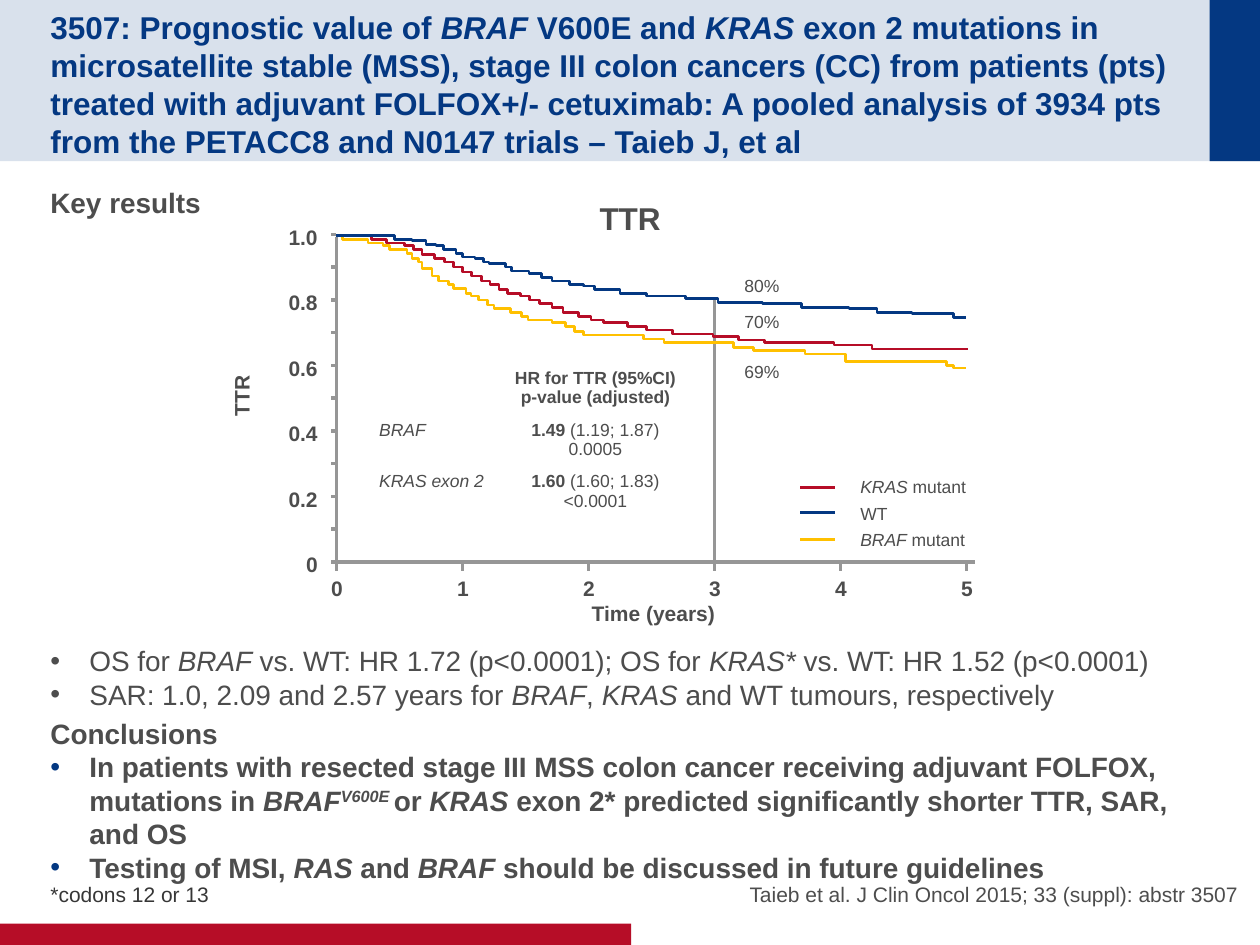
"""Build the slide on BRAF and KRAS mutations in stage III colon cancer."""
from lxml import etree
from pptx import Presentation
from pptx.dml.color import RGBColor
from pptx.enum.shapes import MSO_CONNECTOR, MSO_SHAPE
from pptx.enum.text import MSO_ANCHOR, MSO_AUTO_SIZE, PP_ALIGN
from pptx.oxml.ns import qn
from pptx.util import Pt

PX = 9144
NAVY = RGBColor(0x04, 0x38, 0x82)
RED = RGBColor(0xB6, 0x0D, 0x27)
GOLD = RGBColor(0xFF, 0xC0, 0x00)
GREY = RGBColor(0x96, 0x96, 0x96)
INK = RGBColor(0x4D, 0x4D, 0x4D)
DARK = RGBColor(0x36, 0x36, 0x36)
WHITE = RGBColor(0xFF, 0xFF, 0xFF)
LEFT, MID, RIGHT = PP_ALIGN.LEFT, PP_ALIGN.CENTER, PP_ALIGN.RIGHT
TOP, CENTRE, BASE = MSO_ANCHOR.TOP, MSO_ANCHOR.MIDDLE, MSO_ANCHOR.BOTTOM
RECT, LINE = MSO_SHAPE.RECTANGLE, MSO_CONNECTOR.STRAIGHT
GROW = MSO_AUTO_SIZE.SHAPE_TO_FIT_TEXT


def write(para, parts, size, color=INK, bold=False):
    """Add runs; a mark of b, i or s means bold, italic or raised."""
    for text, mark in parts:
        if text == "\n":
            para.add_line_break()
            continue
        run = para.add_run()
        run.text = text
        font = run.font
        font.name, font.size = "Arial", Pt(size)
        font.bold, font.italic = bold or "b" in mark, "i" in mark
        font.color.rgb = color
        if "s" in mark:
            run._r.get_or_add_rPr().set("baseline", "30000")


def stroke(shape, color, width):
    """Set a plain line without shadow."""
    shape.line.color.rgb = color
    shape.line.width = Pt(width)
    etree.SubElement(shape._element.spPr, qn("a:effectLst"))


deck = Presentation()
deck.slide_width, deck.slide_height = 1000 * PX, 750 * PX
slide = deck.slides.add_slide(deck.slide_layouts[6])
shapes = slide.shapes

for x, y, w, h, color, alpha in [
    (0, 0, 1000, 128, NAVY, 15),
    (960, 0, 40, 128, NAVY, 100),
    (0, 733, 501, 17, RED, 100),
]:
    bar = shapes.add_shape(RECT, x * PX, y * PX, w * PX, h * PX)
    bar.shadow.inherit = False
    bar.fill.solid()
    bar.fill.fore_color.rgb = color
    bar.line.fill.background()
    if alpha < 100:
        tint = bar._element.spPr.find(".//" + qn("a:srgbClr"))
        etree.SubElement(tint, qn("a:alpha")).set("val", str(alpha * 1000))

title = [
    ("3507: Prognostic value of ", ""), ("BRAF", "i"), (" V600E and ", ""),
    ("KRAS ", "i"),
    ("exon 2 mutations in microsatellite stable (MSS), stage III colon cancers "
     "(CC) from patients (pts) treated with adjuvant FOLFOX+/- cetuximab: A "
     "pooled analysis of 3934 pts from the PETACC8 and N0147 trials – "
     "Taieb J, et al", ""),
]
cite = "Taieb et al. J Clin Oncol 2015; 33 (suppl): abstr 3507"
for x, y, w, h, size, color, bold, side, anchor, parts in [
    (40, 25, 901, 83, 18, NAVY, True, LEFT, CENTRE, title),
    (40, 147, 300, 27, 16, INK, True, LEFT, TOP, [("Key results", "")]),
    (40, 700, 452, 20, 12, DARK, False, LEFT, BASE, [("*codons 12 or 13", "")]),
    (508, 667, 475, 53, 12, INK, False, RIGHT, BASE, [(cite, "")]),
    (40, 511, 909, 210, 16, INK, False, LEFT, TOP, []),
]:
    box = shapes.add_textbox(x * PX, y * PX, w * PX, h * PX)
    frame = box.text_frame
    frame.word_wrap = True
    frame.vertical_anchor = anchor
    frame.margin_left = frame.margin_right = 0
    frame.margin_top = frame.margin_bottom = 0
    frame.paragraphs[0].alignment = side
    write(frame.paragraphs[0], parts, size, color, bold)

points = [
    (INK, False, [
        ("OS for ", ""), ("BRAF ", "i"),
        ("vs. WT: HR 1.72 (p<0.0001); OS for ", ""), ("KRAS*", "i"),
        (" vs. WT: HR 1.52 (p<0.0001)", "")]),
    (INK, False, [
        ("SAR: 1.0, 2.09 and 2.57 years for ", ""), ("BRAF", "i"), (", ", ""),
        ("KRAS", "i"), (" and WT tumours, respectively", "")]),
    (None, True, [("Conclusions", "")]),
    (NAVY, True, [
        ("In patients with resected stage III MSS colon cancer receiving "
         "adjuvant FOLFOX, mutations in ", ""), ("BRAF", "i"), ("V600E ", "is"),
        ("or ", ""), ("KRAS", "i"),
        (" exon 2* predicted significantly shorter TTR, SAR, and OS", "")]),
    (NAVY, True, [
        ("Testing of MSI, ", ""), ("RAS", "i"), (" and ", ""), ("BRAF", "i"),
        (" should be discussed in future guidelines", "")]),
]
for i, (dot, bold, parts) in enumerate(points):
    para = frame.add_paragraph() if i else frame.paragraphs[0]
    write(para, parts, 16, INK, bold)
    if dot is None:
        para.space_before = Pt(3)
        continue
    props = para._p.get_or_add_pPr()
    props.set("marL", str(31 * PX))
    props.set("indent", str(-31 * PX))
    tint = etree.SubElement(props, qn("a:buClr"))
    etree.SubElement(tint, qn("a:srgbClr")).set("val", str(dot))
    etree.SubElement(props, qn("a:buFont")).set("typeface", "Arial")
    etree.SubElement(props, qn("a:buChar")).set("char", "•")

rows = [
    ([], [("HR for TTR (95%CI)", "b"), ("\n", ""), ("p-value (adjusted)", "b")]),
    ([("BRAF", "i")],
     [("1.49", "b"), (" (1.19; 1.87)", ""), ("\n", ""), ("0.0005", "")]),
    ([("KRAS exon 2", "i")],
     [("1.60", "b"), (" (1.60; 1.83)", ""), ("\n", ""), ("<0.0001", "")]),
]
table = shapes.add_table(3, 2, 291 * PX, 288 * PX, 258 * PX, 123 * PX).table
table.first_row = table.horz_banding = False
table.columns[0].width, table.columns[1].width = 105 * PX, 153 * PX
for r, row in enumerate(rows):
    for c, parts in enumerate(row):
        cell = table.cell(r, c)
        cell.fill.solid()
        cell.fill.fore_color.rgb = WHITE
        para = cell.text_frame.paragraphs[0]
        para.alignment = MID if c else LEFT
        para.line_spacing = Pt(11)
        write(para, parts, 10)

lines = [(567, 446, 567, 238, GREY, 2)]
lines += [(263, 446 - 26 * i, 267, 446 - 26 * i, GREY, 2) for i in range(11)]
lines += [(267 + 100 * i, 447, 267 + 100 * i, 453, GREY, 2) for i in range(6)]
lines += [(635, y, 663, y, color, 1.5)
          for y, color in [(387, RED), (407, NAVY), (428, GOLD)]]
for x, y, right, low, color, width in lines:
    line = shapes.add_connector(LINE, x * PX, y * PX, right * PX, low * PX)
    stroke(line, color, width)

braf = [
    (272, 190), (292, 193), (304, 195), (309, 198), (323, 201), (327, 205),
    (332, 208), (335, 213), (343, 219), (348, 223), (356, 226), (360, 229),
    (370, 233), (374, 235), (380, 238), (387, 242), (392, 245), (405, 248),
    (414, 251), (419, 254), (438, 256), (449, 259), (456, 263), (463, 266),
    (511, 269), (527, 272), (582, 276), (598, 278), (639, 281), (671, 287),
    (751, 290), (757, 292), (767, 292)]
kras = [
    (295, 190), (307, 193), (321, 195), (328, 198), (335, 202), (345, 205),
    (353, 208), (360, 212), (367, 216), (374, 219), (382, 223), (389, 226),
    (396, 230), (403, 233), (413, 235), (420, 238), (428, 241), (438, 244),
    (447, 248), (459, 251), (469, 254), (479, 256), (498, 259), (513, 262),
    (534, 265), (566, 267), (586, 270), (607, 272), (662, 274), (692, 277),
    (768, 277)]
wild = [
    (313, 190), (327, 191), (338, 194), (346, 195), (352, 198), (362, 201),
    (367, 204), (377, 205), (384, 208), (388, 209), (401, 212), (406, 215),
    (420, 217), (430, 220), (438, 223), (452, 226), (463, 227), (472, 230),
    (492, 233), (513, 235), (544, 237), (570, 240), (605, 241), (636, 244),
    (674, 245), (696, 248), (724, 249), (757, 252), (767, 252)]
axis = [(267, 446), (774, 446)]
for top, steps, color, width in [
    (188, axis, GREY, 2), (187, braf, GOLD, 1.5),
    (187, kras, RED, 1.5), (187, wild, NAVY, 1.5),
]:
    path, last = [], top
    for x, y in steps:
        path += [(x, last), (x, y)]
        last = y
    pen = shapes.build_freeform(267, top, scale=PX)
    pen.add_line_segments(path, close=False)
    curve = pen.convert_to_shape()
    curve.fill.background()
    stroke(curve, color, width)

labels = [
    (466, 153, 69, 40, 18, True, LEFT, 0, [("TTR", "")]),
    (165, 299, 53, 30, 12, True, MID, 270, [("TTR", "")]),
    (459, 472, 119, 30, 12, True, MID, 0, [("Time (years)", "")]),
    (673, 373, 105, 27, 10, False, LEFT, 0, [("KRAS", "i"), (" mutant", "")]),
    (673, 394, 42, 27, 10, False, LEFT, 0, [("WT", "")]),
    (673, 415, 104, 27, 10, False, LEFT, 0, [("BRAF", "i"), (" mutant", "")]),
]
for i, mark in enumerate(["0", "0.2", "0.4", "0.6", "0.8", "1.0"]):
    labels += [
        (218, 433 - 52 * i, 44, 30, 12, True, RIGHT, 0, [(mark, "")]),
        (253 + 100 * i, 452, 29, 30, 12, True, MID, 0, [(str(i), "")])]
for y, rate in [(213, "80%"), (242, "70%"), (282, "69%")]:
    labels.append((581, y, 48, 27, 10, False, LEFT, 0, [(rate, "")]))
for x, y, w, h, size, bold, side, turn, parts in labels:
    box = shapes.add_textbox(x * PX, y * PX, w * PX, h * PX)
    box.rotation = turn
    frame = box.text_frame
    frame.word_wrap = False
    frame.auto_size = GROW
    frame.paragraphs[0].alignment = side
    write(frame.paragraphs[0], parts, size, INK, bold)

deck.save("out.pptx")
